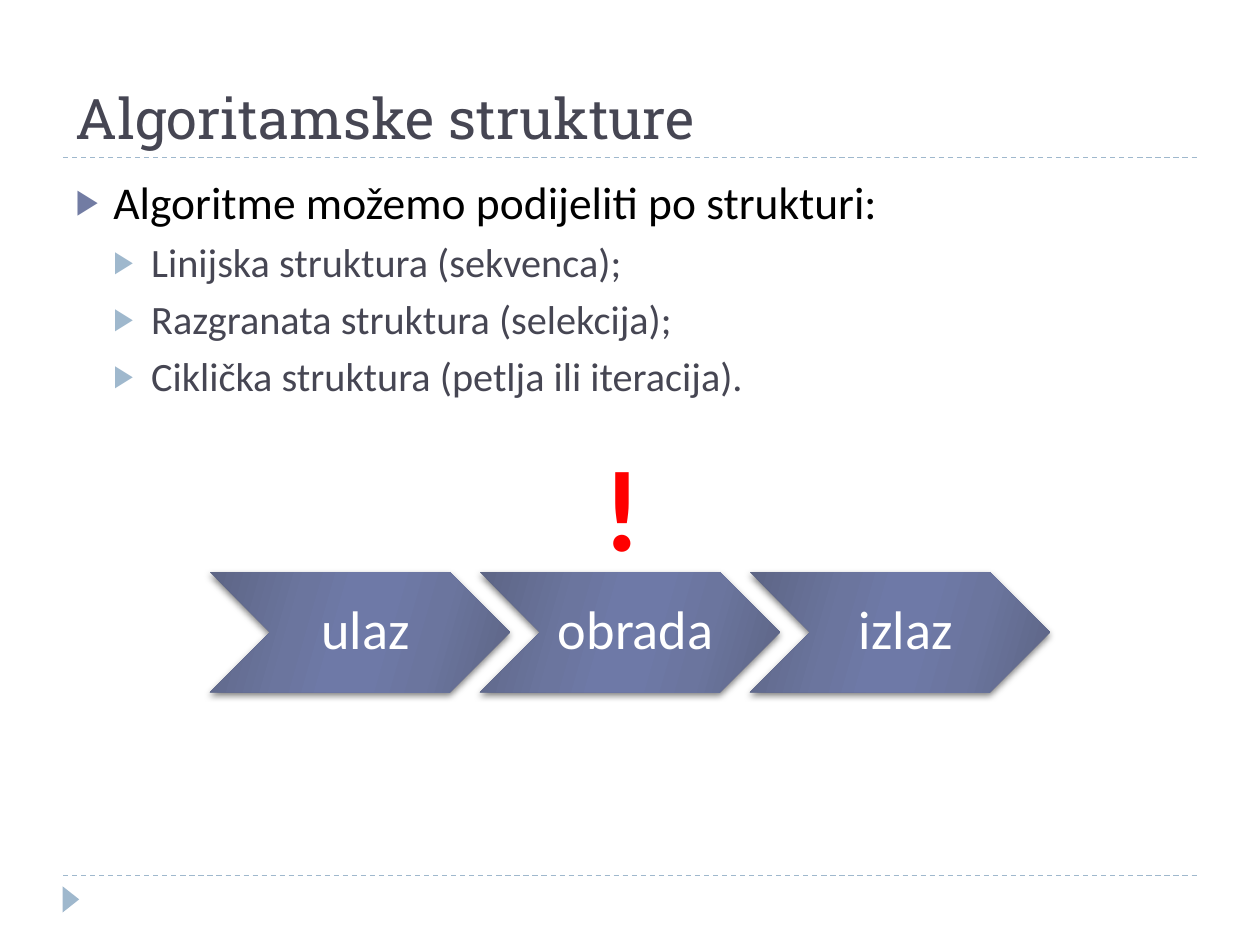
from dataclasses import dataclass

from lxml.etree import SubElement
from pptx import Presentation
from pptx.dml.color import RGBColor as Rgb
from pptx.enum.dml import MSO_LINE_DASH_STYLE as Dash
from pptx.enum.shapes import MSO_CONNECTOR as Connector, MSO_SHAPE as Shape
from pptx.enum.text import MSO_ANCHOR as Anchor, MSO_AUTO_SIZE as AutoSize, PP_ALIGN as Align
from pptx.oxml import parse_xml
from pptx.oxml.ns import nsdecls, qn
from pptx.util import Pt


@dataclass(frozen=True)
class Theme:
    """Hold the colours, fonts and type sizes of the slide."""
    heading_font: str = "Roboto Slab"
    body_font: str = "Calibri"
    ink: str = "464653"
    black: str = "000000"
    white: str = "FFFFFF"
    alert: str = "FF0000"
    accent: str = "727CA3"
    pale: str = "9FB8CD"
    gradient: tuple = ((0, "5D6585"), (30, "6B759E"), (45, "6E79A7"),
                       (55, "6E79A7"), (73, "6B759E"), (100, "5D6585"))
    title_size: int = 32
    topic_size: int = 26
    item_size: int = 23
    step_size: int = 31
    alert_size: int = 66


THEME = Theme()
TOPIC = "Algoritme možemo podijeliti po strukturi:"
STRUCTURES = ("Linijska struktura (sekvenca);", "Razgranata struktura (selekcija);",
              "Ciklička struktura (petlja ili iteracija).")
STEPS = ("ulaz", "obrada", "izlaz")


def place(part, box):
    """Move a part to a box given in points."""
    part.left, part.top, part.width, part.height = map(Pt, box)


def style(paragraph, size, color, face=THEME.body_font, bold=False):
    """Set the font of a whole paragraph."""
    font = paragraph.font
    font.name, font.size, font.bold = face, Pt(size), bold
    font.color.rgb = Rgb.from_string(color)


def set_bullet(paragraph, color, indent):
    """Give a paragraph a triangular bullet with a hanging indent."""
    props = paragraph._p.get_or_add_pPr()
    props.set("marL", str(Pt(indent)))
    props.set("indent", str(-Pt(21.6)))
    SubElement(SubElement(props, qn("a:buClr")), qn("a:srgbClr"), val=color)
    SubElement(props, qn("a:buSzPct"), val="76000")
    SubElement(props, qn("a:buFont"), typeface="Arial")
    SubElement(props, qn("a:buChar"), char="▶")


def add_rule(slide, left, top, width):
    """Draw a dashed horizontal rule."""
    rule = slide.shapes.add_connector(Connector.STRAIGHT, Pt(left), Pt(top), Pt(left + width), Pt(top))
    rule.line.color.rgb = Rgb.from_string(THEME.pale)
    rule.line.width = Pt(0.75)
    rule.line.dash_style = Dash.DASH
    SubElement(rule._element.spPr, qn("a:effectLst"))


def add_footer(slide, left, top, width):
    """Draw the bottom rule with the page marker below it."""
    add_rule(slide, left, top, width)
    marker = slide.shapes.add_shape(Shape.ISOSCELES_TRIANGLE, Pt(left - 3), Pt(top + 8.8), Pt(15), Pt(9.5))
    marker.rotation = 90
    marker.shadow.inherit = False
    marker.fill.solid()
    marker.fill.fore_color.rgb = Rgb.from_string(THEME.pale)
    marker.line.fill.background()


def add_heading(slide, box):
    """Fill the title and rule it off along its bottom edge."""
    left, top, width, height = box
    title = slide.shapes.title
    place(title, box)
    frame = title.text_frame
    frame.text = "Algoritamske strukture"
    frame.vertical_anchor = Anchor.BOTTOM
    frame.auto_size = AutoSize.NONE
    frame.paragraphs[0].alignment = Align.LEFT
    style(frame.paragraphs[0], THEME.title_size, THEME.ink, THEME.heading_font)
    add_rule(slide, left, top + height, width)


def add_structures(slide, box):
    """Fill the body with the topic and its list of structures."""
    body = slide.placeholders[1]
    place(body, box)
    frame = body.text_frame
    frame.text = "\n".join((TOPIC, *STRUCTURES))
    frame.auto_size = AutoSize.NONE
    topic, *items = frame.paragraphs
    topic.space_before = Pt(6)
    set_bullet(topic, THEME.accent, 21.6)
    style(topic, THEME.topic_size, THEME.black)
    for item in items:
        item.level = 1
        item.space_before = Pt(5)
        set_bullet(item, THEME.pale, 43.2)
        style(item, THEME.item_size, THEME.ink)


def shade(chevron):
    """Give a chevron its banded gradient and soft shadow."""
    stops = "".join(f'<a:gs pos="{pos * 1000}"><a:srgbClr val="{color}"/></a:gs>'
                    for pos, color in THEME.gradient)
    gradient = parse_xml(f'<a:gradFill {nsdecls("a")} rotWithShape="1"><a:gsLst>{stops}</a:gsLst>'
                         f'<a:lin ang="{16 * 60000}" scaled="0"/></a:gradFill>')
    shadow = parse_xml(f'<a:effectLst {nsdecls("a")}><a:outerShdw blurRad="{Pt(4)}" dist="{Pt(2)}" '
                       f'dir="{90 * 60000}" rotWithShape="0"><a:srgbClr val="{THEME.black}">'
                       '<a:alpha val="50000"/></a:srgbClr></a:outerShdw></a:effectLst>')
    chevron.line.fill.background()
    props = chevron._element.spPr
    props.find(qn("a:prstGeom")).addnext(gradient)
    props.append(shadow)


def add_process(slide, box):
    """Draw the steps as a row of interlocking chevrons."""
    left, top, width, height = box
    pitch = 0.9
    step_width = width / (1 + pitch * (len(STEPS) - 1))
    for index, step in enumerate(STEPS):
        chevron = slide.shapes.add_shape(Shape.CHEVRON, Pt(left + index * pitch * step_width), Pt(top),
                                         Pt(step_width), Pt(height))
        shade(chevron)
        frame = chevron.text_frame
        frame.text = step
        frame.word_wrap = True
        frame.vertical_anchor = Anchor.MIDDLE
        frame.margin_left = Pt(10)
        frame.margin_right = frame.margin_top = frame.margin_bottom = Pt(3.6)
        label = frame.paragraphs[0]
        label.alignment = Align.CENTER
        label.line_spacing = 0.9
        style(label, THEME.step_size, THEME.white)


def add_alert(slide, box):
    """Set the exclamation mark above the middle step."""
    frame = slide.shapes.add_textbox(*map(Pt, box)).text_frame
    frame.text = "!"
    frame.word_wrap = True
    frame.auto_size = AutoSize.SHAPE_TO_FIT_TEXT
    style(frame.paragraphs[0], THEME.alert_size, THEME.alert, bold=True)


def main():
    """Build and save the slide."""
    deck = Presentation()
    deck.slide_width, deck.slide_height = Pt(720), Pt(540)
    slide = deck.slides.add_slide(deck.slide_layouts[1])
    add_footer(slide, 36, 500.4, 648)
    add_heading(slide, (36, 12, 648, 78))
    add_structures(slide, (36, 96, 648, 389))
    add_process(slide, (120, 327, 480, 68.6))
    add_alert(slide, (338, 245.5, 51, 87))
    deck.save("out.pptx")


if __name__ == "__main__":
    main()
